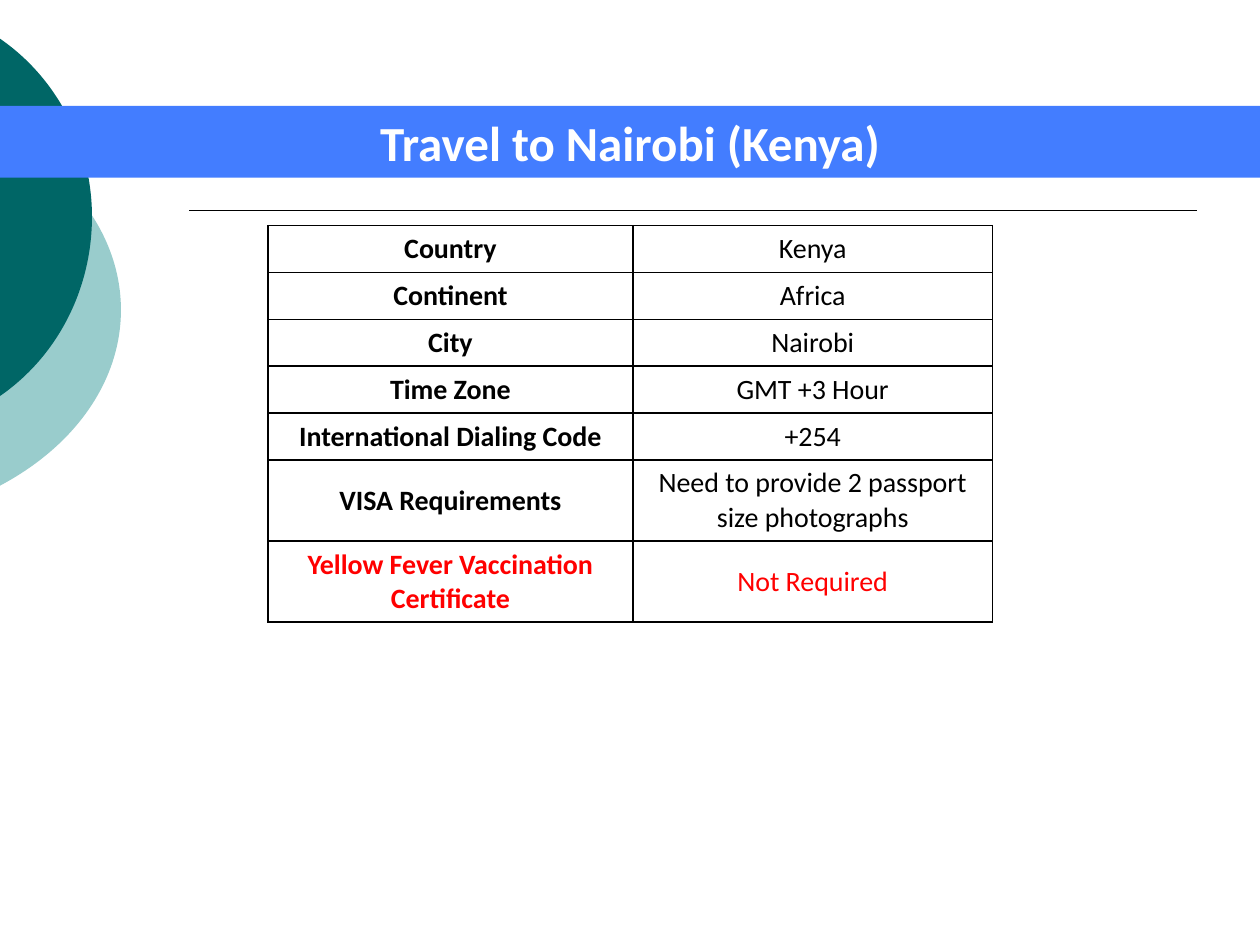
from dataclasses import dataclass

from lxml.etree import SubElement
from pptx import Presentation
from pptx.dml.color import RGBColor
from pptx.enum.shapes import MSO_CONNECTOR
from pptx.enum.text import MSO_ANCHOR, PP_ALIGN
from pptx.oxml.ns import qn
from pptx.util import Inches, Pt


@dataclass(frozen=True)
class Theme:
    font: str = "Calibri"
    title_size: int = 28
    cell_size: int = 16
    line_width: int = 1
    black: str = "000000"
    white: str = "FFFFFF"
    red: str = "FF0000"
    blue: str = "437DFF"
    teal: str = "006666"
    pale_teal: str = "99CCCC"


THEME = Theme()
PAGE_WIDTH, PAGE_HEIGHT = 10, 7.5

FACTS = [
    ("Country", "Kenya"),
    ("Continent", "Africa"),
    ("City", "Nairobi"),
    ("Time Zone", "GMT +3 Hour"),
    ("International Dialing Code", "+254"),
    ("VISA Requirements", "Need to provide 2 passport size photographs"),
    ("Yellow Fever Vaccination Certificate", "Not Required"),
]
COLUMN_WIDTHS = (2.9, 2.85)
# Rows grow to fit their text
ROW_HEIGHTS = [0.27] * 6 + [0.35]


def place(shape, left, top, width, height):
    """Set the box of a shape, in inches."""
    box = {"left": left, "top": top, "width": width, "height": height}
    for name, value in box.items():
        setattr(shape, name, Inches(value))


def paint(shape, color):
    """Fill a shape with one plain colour."""
    shape.fill.solid()
    shape.fill.fore_color.rgb = RGBColor.from_string(color)


def write_text(frame, text, size, color, bold):
    """Write one centred paragraph into a text frame."""
    frame.text = text
    frame.word_wrap = True
    para = frame.paragraphs[0]
    para.alignment = PP_ALIGN.CENTER
    font = para.runs[0].font
    formats = {"name": THEME.font, "size": Pt(size), "bold": bold}
    for name, value in formats.items():
        setattr(font, name, value)
    font.color.rgb = RGBColor.from_string(color)


def add_disc_edge(page, left, top, width, height, start, curves, color):
    """Draw the right part of a disc; points are relative to its box."""
    builder = page.shapes.build_freeform(0, 0)
    corners = [(width, 0), (width, height), (0, height)]
    builder.add_line_segments([(Inches(x), Inches(y)) for x, y in corners])
    disc = builder.convert_to_shape()
    place(disc, left, top, width, height)

    # Replace the straight outline by cubic curves
    outline = next(disc.element.iter(qn("a:path")))
    for segment in list(outline):
        outline.remove(segment)
    outline.set("w", str(Inches(width)))
    outline.set("h", str(Inches(height)))
    segments = [("a:moveTo", [start])] + [("a:cubicBezTo", curve) for curve in curves]
    for tag, points in segments:
        segment = SubElement(outline, qn(tag))
        for x, y in points:
            SubElement(segment, qn("a:pt"), x=str(Inches(x)), y=str(Inches(y)))
    SubElement(outline, qn("a:close"))

    disc.shadow.inherit = False
    paint(disc, color)
    disc.line.fill.background()


def add_rule(page, left, top, width):
    """Draw the thin line below the title."""
    rule = page.shapes.add_connector(
        MSO_CONNECTOR.STRAIGHT, Inches(left), Inches(top), Inches(left + width), Inches(top))
    rule.line.color.rgb = RGBColor.from_string(THEME.black)
    rule.line.width = Pt(THEME.line_width)
    SubElement(rule.element.spPr, qn("a:effectLst"))


def add_title(page, left, top, width, height, text):
    """Turn the title placeholder into a full-width band."""
    title = page.shapes.title
    place(title, left, top, width, height)
    paint(title, THEME.blue)
    write_text(title.text_frame, text, THEME.title_size, THEME.white, True)
    title.text_frame.vertical_anchor = MSO_ANCHOR.MIDDLE
    # Bring the band in front of the discs
    title.element.getparent().append(title.element)


def add_borders(cell):
    """Outline a cell on all four sides."""
    properties = cell._tc.get_or_add_tcPr()
    for side in ("lnL", "lnR", "lnT", "lnB"):
        line = SubElement(properties, qn(f"a:{side}"), w=str(Pt(THEME.line_width)))
        fill = SubElement(line, qn("a:solidFill"))
        SubElement(fill, qn("a:srgbClr"), val=THEME.black)


def add_facts_table(page, left, top, width, height):
    """Place the travel facts, with the last row in red."""
    holder = page.shapes.add_table(
        len(FACTS), len(COLUMN_WIDTHS),
        Inches(left), Inches(top), Inches(width), Inches(height))
    table = holder.table
    table.first_row = table.horz_banding = False
    for column, column_width in zip(table.columns, COLUMN_WIDTHS):
        column.width = Inches(column_width)
    for row, row_height in zip(table.rows, ROW_HEIGHTS):
        row.height = Inches(row_height)
    holder.height = Inches(height)

    for row_index, fact in enumerate(FACTS):
        color = THEME.red if row_index == len(FACTS) - 1 else THEME.black
        for column_index, text in enumerate(fact):
            cell = table.cell(row_index, column_index)
            write_text(cell.text_frame, text, THEME.cell_size, color, column_index == 0)
            cell.vertical_anchor = MSO_ANCHOR.MIDDLE
            add_borders(cell)
            cell.fill.background()


def main():
    deck = Presentation()
    deck.slide_width, deck.slide_height = Inches(PAGE_WIDTH), Inches(PAGE_HEIGHT)
    page = deck.slides.add_slide(deck.slide_layouts[5])

    # Decoration at the left edge
    add_disc_edge(page, -3.54, 0.75, 4.5, 3.42, (3.53, 0.31), [
        [(4.14, 0.63), (4.5, 1.15), (4.5, 1.71)],
        [(4.5, 2.27), (4.14, 2.79), (3.53, 3.11)],
    ], THEME.pale_teal)
    add_disc_edge(page, -2.65, 0, 3.38, 3.45, (2.64, 0.3), [
        [(3.11, 0.62), (3.38, 1.16), (3.38, 1.72)],
        [(3.38, 2.29), (3.11, 2.83), (2.64, 3.15)],
    ], THEME.teal)
    add_rule(page, 1.5, 1.67, 8)

    # Content, with the table centred on the page
    add_title(page, 0, 0.84, PAGE_WIDTH, 0.57, "Travel to Nairobi (Kenya)")
    table_width = sum(COLUMN_WIDTHS)
    add_facts_table(page, (PAGE_WIDTH - table_width) / 2, 1.79, table_width, 4.2)

    deck.save("out.pptx")


if __name__ == "__main__":
    main()
